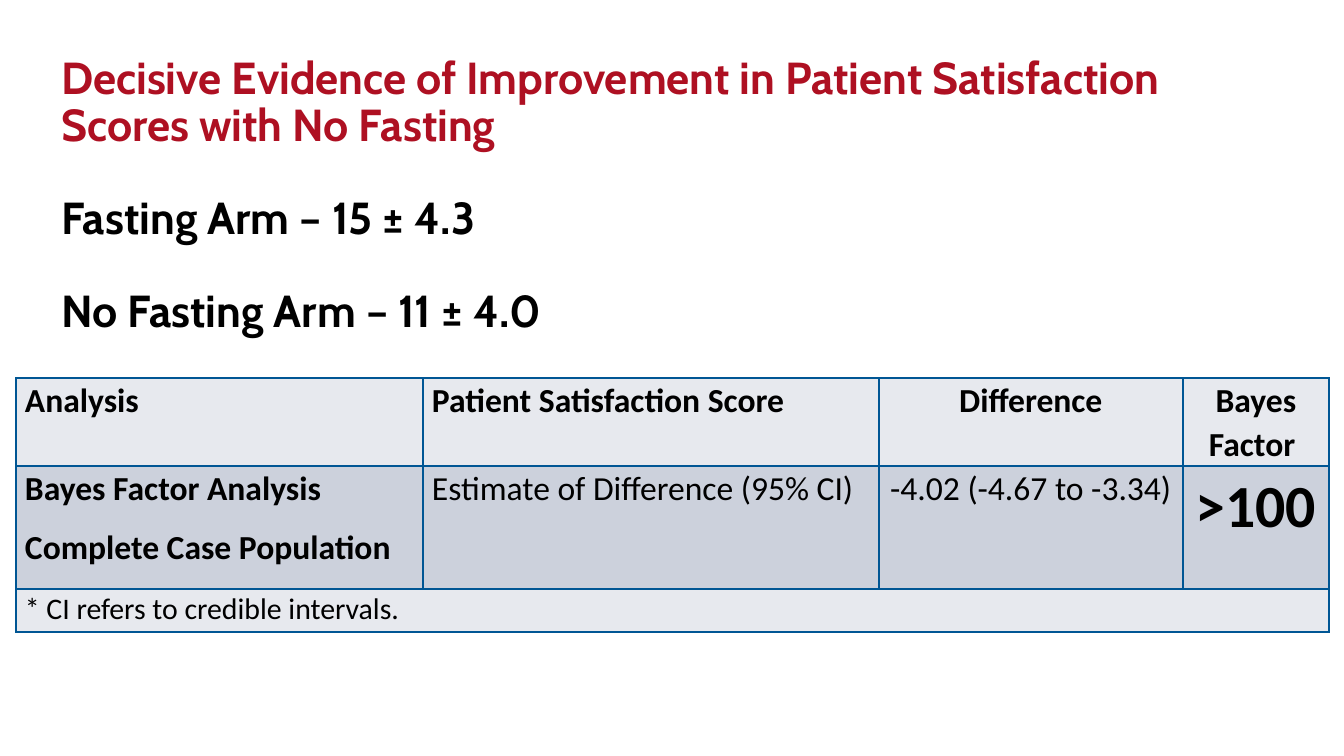
from pptx import Presentation
from pptx.dml.color import RGBColor
from pptx.enum.text import PP_ALIGN
from pptx.oxml import parse_xml
from pptx.oxml.ns import nsdecls
from pptx.util import Emu, Pt

# Content: (text, colour, points before)
LINES = [
    ("Decisive Evidence of Improvement in Patient Satisfaction Scores with No Fasting",
     "AE1022", 0),
    ("Fasting Arm – 15 ± 4.3", "000000", 25),
    ("No Fasting Arm – 11 ± 4.0", "000000", 25),
]
# Each cell: (paragraphs, size, bold)
ROWS = [
    [(["Analysis"], 18, True), (["Patient Satisfaction Score"], 18, True),
     (["Difference"], 18, True), (["Bayes Factor "], 18, True)],
    [(["Bayes Factor Analysis", "Complete Case Population"], 18, True),
     (["Estimate of Difference (95% CI)"], 18, False),
     (["-4.02 (-4.67 to -3.34)"], 18, False), ([">100"], 32, True)],
    [(["* CI refers to credible intervals."], 16, False)],
]
FILLS = ["E7E9EE", "CCD1DC", "E7E9EE"]
ALIGNS = [PP_ALIGN.LEFT, PP_ALIGN.LEFT, PP_ALIGN.CENTER, PP_ALIGN.CENTER]
WIDTHS = [407, 456, 304, 146]
HEIGHTS = [88, 123, 43]
EDGE = "005694"


def px(n):
    return Emu(round(n * 914400 / 134.4))


def tint(code):
    return RGBColor.from_string(code)


def add_run(para, text, face, size, bold, color):
    run = para.add_run()
    run.text = text
    font = run.font
    font.name, font.size, font.bold = face, Pt(size), bold
    font.color.rgb = tint(color)


def add_edges(cell):
    props = cell._tc.get_or_add_tcPr()
    for i, side in enumerate(("lnL", "lnR", "lnT", "lnB")):
        props.insert(i, parse_xml(
            f'<a:{side} {nsdecls("a")} w="12700"><a:solidFill>'
            f'<a:srgbClr val="{EDGE}"/></a:solidFill></a:{side}>'))


deck = Presentation()
deck.slide_width, deck.slide_height = px(1344), px(756)
slide = deck.slides.add_slide(deck.slide_layouts[6])

# Heading and the two arms
box = slide.shapes.add_textbox(px(48), px(50), px(1248), px(63))
frame = box.text_frame
frame.word_wrap = True
for i, (text, color, gap) in enumerate(LINES):
    para = frame.add_paragraph() if i else frame.paragraphs[0]
    para.line_spacing = Pt(25)
    if gap:
        para.space_before = Pt(gap)
    add_run(para, text, "Cabin", 24, True, color)

# Results table
table = slide.shapes.add_table(len(ROWS), len(WIDTHS), px(16), px(378),
                               px(sum(WIDTHS)), px(sum(HEIGHTS))).table
for col, width in zip(table.columns, WIDTHS):
    col.width = px(width)
for row, height in zip(table.rows, HEIGHTS):
    row.height = px(height)
table.cell(2, 0).merge(table.cell(2, 3))

for r, fill in enumerate(FILLS):
    for c, align in enumerate(ALIGNS):
        cell = table.cell(r, c)
        cell.fill.solid()
        cell.fill.fore_color.rgb = tint(fill)
        cell.margin_left = cell.margin_right = px(9)
        cell.margin_top = cell.margin_bottom = 0
        add_edges(cell)
        if c >= len(ROWS[r]):
            continue
        texts, size, bold = ROWS[r][c]
        for i, text in enumerate(texts):
            frame = cell.text_frame
            para = frame.add_paragraph() if i else frame.paragraphs[0]
            para.alignment = align
            para.line_spacing = 1.07
            para.space_after = Pt(8)
            add_run(para, text, "Calibri", size, bold, "000000")

deck.save("out.pptx")
